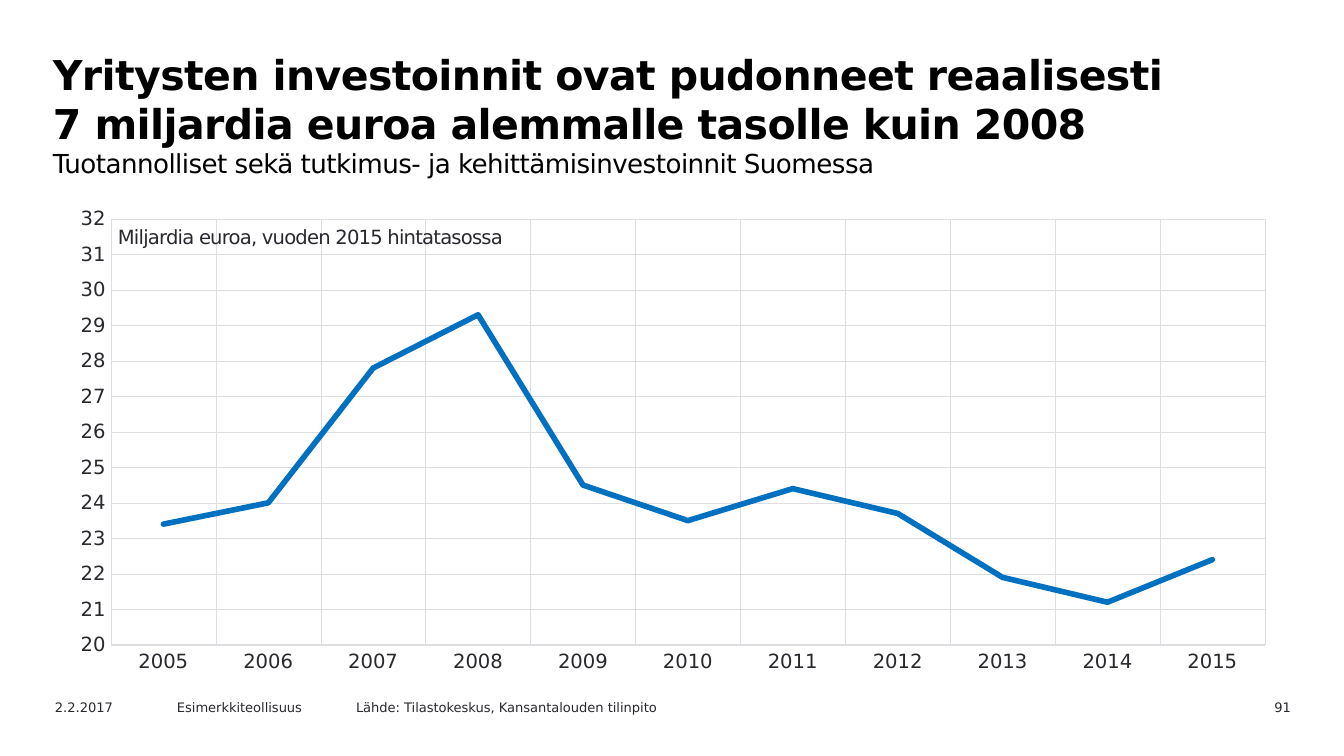
from lxml import etree
from pptx import Presentation
from pptx.chart.data import CategoryChartData
from pptx.dml.color import RGBColor
from pptx.enum.chart import XL_CHART_TYPE, XL_MARKER_STYLE, XL_TICK_MARK
from pptx.enum.text import MSO_ANCHOR, MSO_AUTO_SIZE, PP_ALIGN
from pptx.oxml.ns import qn
from pptx.util import Emu, Pt

LINE_CHART = XL_CHART_TYPE.LINE
NO_MARKER = XL_MARKER_STYLE.NONE
NO_TICK = XL_TICK_MARK.NONE
TOP, MIDDLE = MSO_ANCHOR.TOP, MSO_ANCHOR.MIDDLE
NO_AUTOFIT = MSO_AUTO_SIZE.NONE
LEFT, RIGHT = PP_ALIGN.LEFT, PP_ALIGN.RIGHT

FONT = "DejaVu Sans"
BLACK = RGBColor(0x00, 0x00, 0x00)
INK = RGBColor(0x29, 0x28, 0x2E)
GRID = RGBColor(0xDE, 0xDD, 0xE1)
BLUE = RGBColor(0x00, 0x70, 0xC0)

# Content
HEADLINE = ("Yritysten investoinnit ovat pudonneet reaalisesti\v"
            "7 miljardia euroa alemmalle tasolle kuin 2008")
SUBTITLE = "Tuotannolliset sekä tutkimus- ja kehittämisinvestoinnit Suomessa"
UNIT_NOTE = "Miljardia euroa, vuoden 2015 hintatasossa"
FOOTER = [  # text, left, width, alignment
    ("2.2.2017", 42, 134, LEFT),
    ("Esimerkkiteollisuus", 164, 191, LEFT),
    ("Lähde: Tilastokeskus, Kansantalouden tilinpito", 343, 437, LEFT),
    ("91", 1177, 127, RIGHT),
]
FIRST_YEAR = 2005
INVESTMENTS = [23.4, 24, 27.8, 29.3, 24.5, 23.5, 24.4, 23.7, 21.9, 21.2, 22.4]

# Geometry in px: left, top, width, height
SLIDE_W, SLIDE_H = 1344, 756
TITLE_BOX = (38, 42, 1174, 95)
CHART_BOX = (56, 198, 1234, 485)
PLOT_BOX = (111, 219, 1154, 426)
NOTE_BOX = (113, 219, 530, 35)
FOOTER_TOP, FOOTER_H = 695, 24


def px(length):
    return Emu(round(length * 914400 / 134.4))


def place(shape, box):
    shape.left, shape.top, shape.width, shape.height = map(px, box)


def style(font, size, color=INK, bold=False):
    font.name, font.size, font.bold = FONT, Pt(size), bold
    font.color.rgb = color


def tighten(paragraph, points):
    for run in paragraph.runs:
        run.font._element.set("spc", str(round(points * 100)))


def set_insets(frame, x, y):
    frame.margin_left = frame.margin_right = px(x)
    frame.margin_top = frame.margin_bottom = px(y)


def add_label(slide, text, box, size, inset_x, align=LEFT):
    label = slide.shapes.add_textbox(*map(px, box))
    frame = label.text_frame
    frame.word_wrap = True
    frame.vertical_anchor = MIDDLE
    set_insets(frame, inset_x, 0)
    paragraph = frame.paragraphs[0]
    paragraph.text, paragraph.alignment = text, align
    style(paragraph.font, size)
    return paragraph


def set_plot_layout(chart):
    plot_area = chart._chartSpace.chart.plotArea
    for old in plot_area.findall(qn("c:layout")):
        plot_area.remove(old)
    layout = etree.Element(qn("c:layout"))
    plot_area.insert(0, layout)
    manual = etree.SubElement(layout, qn("c:manualLayout"))
    left, top, width, height = CHART_BOX
    plot_left, plot_top, plot_w, plot_h = PLOT_BOX
    settings = [
        ("layoutTarget", "inner"), ("xMode", "edge"), ("yMode", "edge"),
        ("x", (plot_left - left) / width), ("y", (plot_top - top) / height),
        ("w", plot_w / width), ("h", plot_h / height),
    ]
    for tag, value in settings:
        etree.SubElement(manual, qn(f"c:{tag}")).set("val", str(value))


def add_investment_chart(slide):
    data = CategoryChartData()
    data.categories = [str(FIRST_YEAR + i) for i in range(len(INVESTMENTS))]
    data.add_series("Series 1", INVESTMENTS)
    chart = slide.shapes.add_chart(LINE_CHART, *map(px, CHART_BOX), data).chart
    chart.has_legend = chart.has_title = False
    style(chart.font, 10.5)
    set_plot_layout(chart)

    # Axes and grid
    years, amounts = chart.category_axis, chart.value_axis
    for axis in (years, amounts):
        axis.major_tick_mark = axis.minor_tick_mark = NO_TICK
        axis.has_major_gridlines = True
        grid = axis.major_gridlines.format.line
        grid.color.rgb, grid.width = GRID, Pt(0.25)
        style(axis.tick_labels.font, 10.5)
    years.format.line.color.rgb = GRID
    years.format.line.width = Pt(0.75)
    amounts.format.line.fill.background()
    amounts.minimum_scale, amounts.maximum_scale = 20, 32
    amounts.major_unit = 1
    amounts.tick_labels.number_format = "#,##0"
    amounts.tick_labels.number_format_is_linked = False

    # Series
    plot = chart.plots[0]
    plot.vary_by_categories = False
    series = plot.series[0]
    series.smooth = False
    series.marker.style = NO_MARKER
    line = series.format.line
    line.color.rgb, line.width = BLUE, Pt(3)
    series._element.spPr.find(qn("a:ln")).set("cap", "rnd")


def main():
    prs = Presentation()
    prs.slide_width, prs.slide_height = px(SLIDE_W), px(SLIDE_H)
    slide = prs.slides.add_slide(prs.slide_layouts[5])

    # Headline with subtitle
    title = slide.shapes.title
    place(title, TITLE_BOX)
    frame = title.text_frame
    frame.word_wrap, frame.auto_size = True, NO_AUTOFIT
    frame.vertical_anchor = TOP
    set_insets(frame, 15, 7)
    headline, subtitle = frame.paragraphs[0], frame.add_paragraph()
    for paragraph, text, size, bold in ((headline, HEADLINE, 22, True),
                                        (subtitle, SUBTITLE, 14, False)):
        paragraph.text, paragraph.alignment = text, LEFT
        paragraph.space_before = Pt(0)
        style(paragraph.font, size, BLACK, bold)
        tighten(paragraph, -0.3)

    # Chart and its unit note
    add_investment_chart(slide)
    tighten(add_label(slide, UNIT_NOTE, NOTE_BOX, 10.5, 5), -0.4)

    # Footer
    for text, left, width, align in FOOTER:
        add_label(slide, text, (left, FOOTER_TOP, width, FOOTER_H), 7, 13, align)

    prs.save("out.pptx")


if __name__ == "__main__":
    main()
